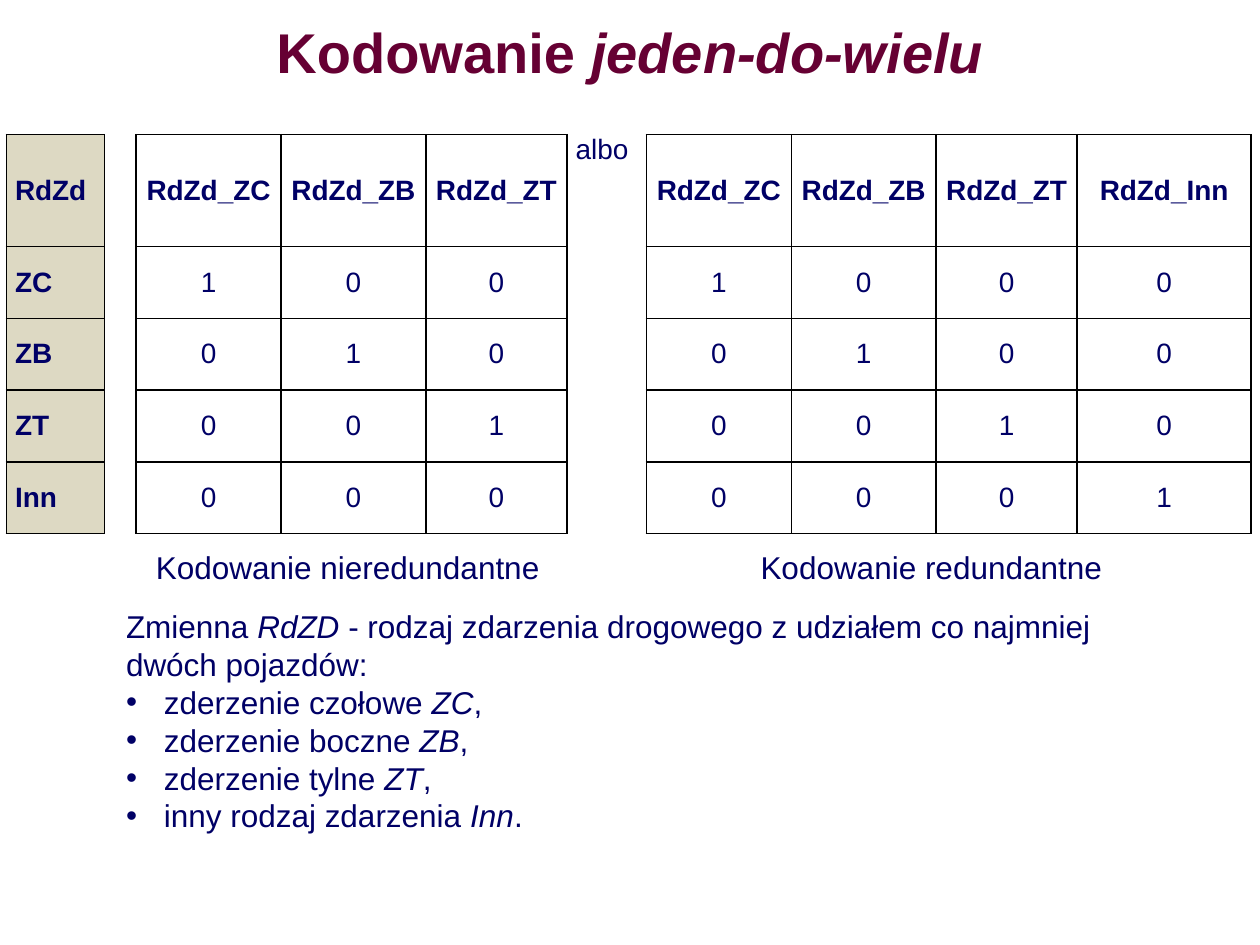
"""Build the slide on one-to-many coding."""
import lxml.etree
import pptx
import pptx.dml.color
import pptx.enum.text
import pptx.oxml.ns
import pptx.util

Pt = pptx.util.Pt
qn = pptx.oxml.ns.qn
ALIGN = pptx.enum.text.PP_ALIGN
ANCHOR = pptx.enum.text.MSO_ANCHOR
SIZING = pptx.enum.text.MSO_AUTO_SIZE

HUES = {"title": "660033", "text": "000066", "key": "DDD9C3", "line": "000000"}

TITLE = [("Kodowanie ", False), ("jeden-do-wielu", True)]
GRID = [
    ["RdZd", "", "RdZd_ZC", "RdZd_ZB", "RdZd_ZT", "albo", "RdZd_ZC", "RdZd_ZB", "RdZd_ZT", "RdZd_Inn"],
    ["ZC", "", "1", "0", "0", "", "1", "0", "0", "0"],
    ["ZB", "", "0", "1", "0", "", "0", "1", "0", "0"],
    ["ZT", "", "0", "0", "1", "", "0", "0", "1", "0"],
    ["Inn", "", "0", "0", "0", "", "0", "0", "0", "1"],
]
GAPS = (1, 5)
WIDTHS = [56.2, 18, 82.8, 82.8, 80.6, 45.4, 82.8, 82.8, 80.6, 99.4]
HEIGHTS = [64] + [41] * 4
NOTES = [("Kodowanie nieredundantne", 82), ("Kodowanie redundantne", 427.5)]
INTRO = [
    ("Zmienna ", False),
    ("RdZD", True),
    (" - rodzaj zdarzenia drogowego z udziałem co najmniej dwóch pojazdów:", False),
]
KINDS = [
    ("zderzenie czołowe ", "ZC", ","),
    ("zderzenie boczne ", "ZB", ","),
    ("zderzenie tylne ", "ZT", ","),
    ("inny rodzaj zdarzenia ", "Inn", "."),
]


def color(name):
    return pptx.dml.color.RGBColor.from_string(HUES[name])


def write(para, text, size, hue="text", bold=False, slant=False):
    run = para.add_run()
    run.text = text
    font = run.font
    font.name, font.size = "Arial", Pt(size)
    font.bold, font.italic = bold, slant
    font.color.rgb = color(hue)


def place(shape, left, top, width, height):
    shape.left, shape.top = Pt(left), Pt(top)
    shape.width, shape.height = Pt(width), Pt(height)


def border(cell, gap):
    props = cell._tc.get_or_add_tcPr()
    for spot, side in enumerate("LRTB"):
        line = lxml.etree.Element(qn(f"a:ln{side}"), w=str(Pt(1)))
        if gap and side in "TB":
            lxml.etree.SubElement(line, qn("a:noFill"))
        else:
            fill = lxml.etree.SubElement(line, qn("a:solidFill"))
            lxml.etree.SubElement(fill, qn("a:srgbClr"), val=HUES["line"])
        props.insert(spot, line)


def fill_cell(cell, text, row, col):
    gap = col in GAPS
    cell.margin_left = cell.margin_right = Pt(5)
    cell.margin_top = cell.margin_bottom = 0
    cell.vertical_anchor = ANCHOR.TOP if gap else ANCHOR.MIDDLE
    if col == 0:
        cell.fill.solid()
        cell.fill.fore_color.rgb = color("key")
    else:
        cell.fill.background()
    border(cell, gap)
    if text:
        para = cell.text_frame.paragraphs[0]
        para.alignment = ALIGN.LEFT if gap or col == 0 else ALIGN.CENTER
        write(para, text, 16, bold=not gap and (row == 0 or col == 0))


def add_grid(slide):
    frame = slide.shapes.add_table(
        len(GRID), len(WIDTHS), Pt(3.6), Pt(77), Pt(sum(WIDTHS)), Pt(sum(HEIGHTS)))
    table = frame.table
    table.first_row = table.horz_banding = False
    for col, width in zip(table.columns, WIDTHS):
        col.width = Pt(width)
    for row, height in zip(table.rows, HEIGHTS):
        row.height = Pt(height)
    for row, items in enumerate(GRID):
        for col, text in enumerate(items):
            fill_cell(table.cell(row, col), text, row, col)


def add_body(body):
    place(body, 64.8, 343.5, 578, 138)
    frame = body.text_frame
    frame.auto_size = SIZING.NONE
    lines = [INTRO] + [[(lead, False), (code, True), (end, False)] for lead, code, end in KINDS]
    for spot, runs in enumerate(lines):
        para = frame.add_paragraph() if spot else frame.paragraphs[0]
        para.space_before = Pt(0)
        props = para._p.get_or_add_pPr()
        dent = Pt(21.6) if spot else 0
        props.set("marL", str(dent))
        props.set("indent", str(-dent))
        if spot:
            lxml.etree.SubElement(props, qn("a:buFont"), typeface="Arial")
            lxml.etree.SubElement(props, qn("a:buChar"), char="•")
        else:
            lxml.etree.SubElement(props, qn("a:buNone"))
        for text, slant in runs:
            write(para, text, 18, slant=slant)


def main():
    deck = pptx.Presentation()
    deck.slide_width, deck.slide_height = Pt(720), Pt(540)
    slide = deck.slides.add_slide(deck.slide_layouts[1])
    title, body = slide.placeholders
    place(title, 0, 3.6, 720, 51)
    title.text_frame.auto_size = SIZING.NONE
    title.text_frame.vertical_anchor = ANCHOR.MIDDLE
    head = title.text_frame.paragraphs[0]
    head.alignment = ALIGN.CENTER
    for text, slant in TITLE:
        write(head, text, 32, "title", True, slant)
    add_grid(slide)
    add_body(body)
    for text, left in NOTES:
        box = slide.shapes.add_textbox(Pt(left), Pt(309.6), Pt(250), Pt(29))
        box.text_frame.word_wrap = True
        write(box.text_frame.paragraphs[0], text, 18)
    deck.save("out.pptx")


if __name__ == "__main__":
    main()
